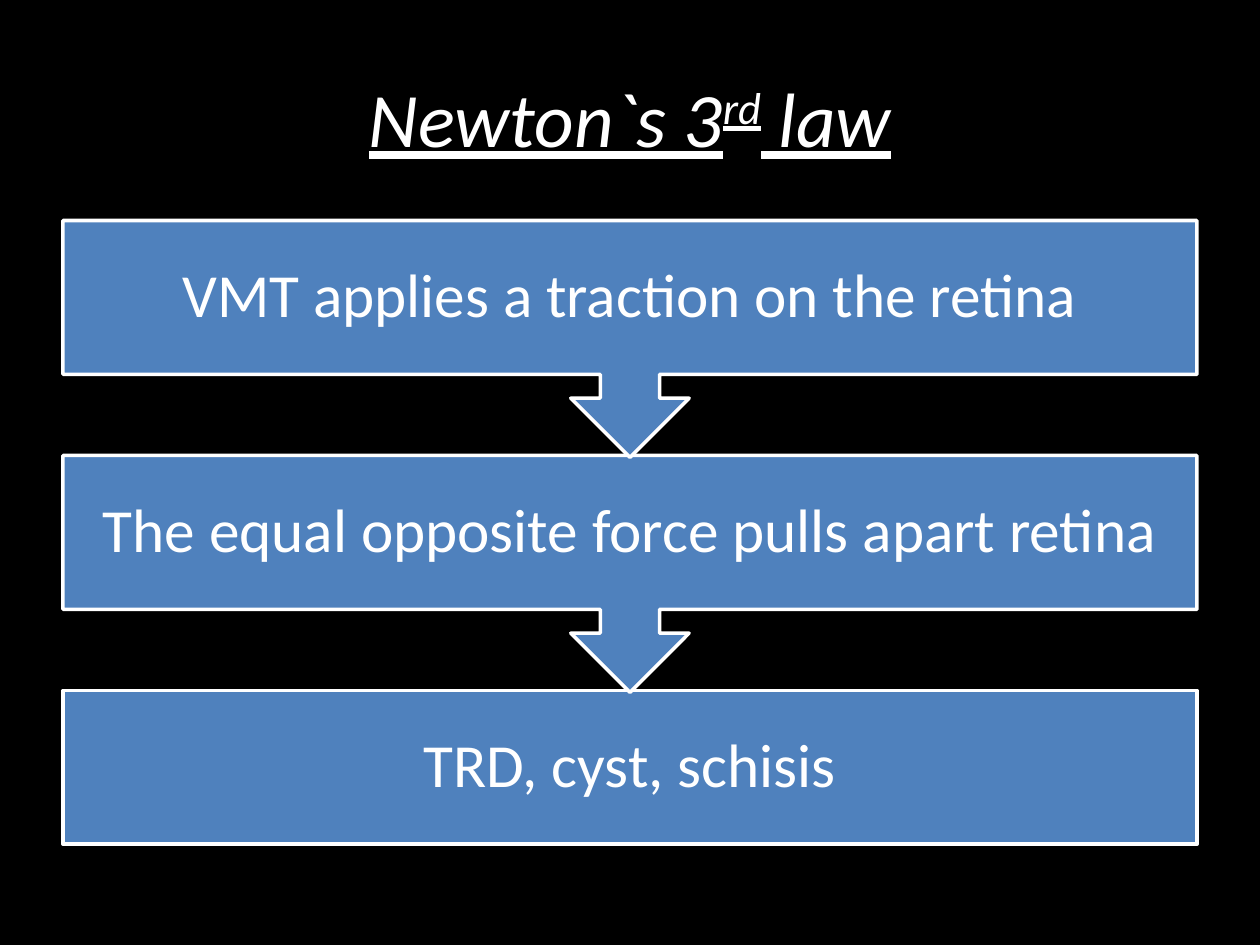
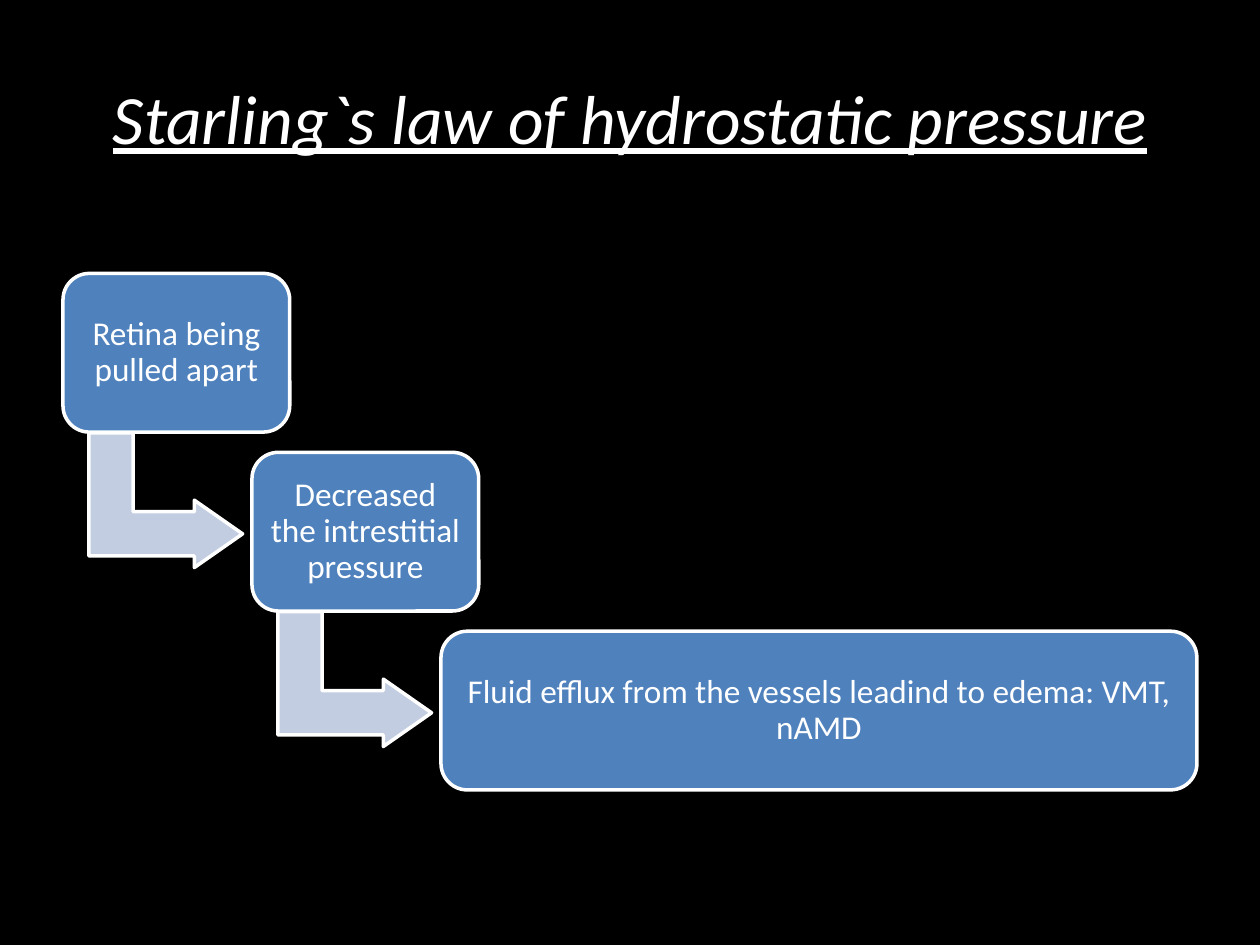
from pptx import Presentation
from pptx.dml.color import RGBColor
from pptx.enum.shapes import MSO_SHAPE
from pptx.enum.text import MSO_ANCHOR, PP_ALIGN
from pptx.util import Inches, Pt

RECTANGLE = MSO_SHAPE.RECTANGLE
CALLOUT = MSO_SHAPE.DOWN_ARROW_CALLOUT
ROUNDED = MSO_SHAPE.ROUNDED_RECTANGLE
BENT_ARROW = MSO_SHAPE.BENT_UP_ARROW
CENTER = PP_ALIGN.CENTER
MIDDLE = MSO_ANCHOR.MIDDLE

COLORS = {"background": "000000", "text": "FFFFFF", "outline": "FFFFFF",
          "step": "4F81BD", "link": "C2CDE1"}
TITLE_FONT = {"name": "Calibri", "italic": True, "underline": True}
STEP_FONT = {"name": "Calibri"}
TITLE_ONLY = 5
MARGIN, CONTENT_WIDTH = 0.5, 9


def write(paragraph, text, size, font_format):
    """Add a run in the shared text colour and return it."""
    paragraph.alignment = CENTER
    run = paragraph.add_run()
    run.text = text
    for attribute, value in {**font_format, "size": Pt(size)}.items():
        setattr(run.font, attribute, value)
    run.font.color.rgb = RGBColor.from_string(COLORS["text"])
    return run


def add_part(slide, kind, box, color, text="", size=0, inset=0):
    """Add an outlined diagram part, with its text if it has one."""
    part = slide.shapes.add_shape(kind, *(Inches(length) for length in box))
    part.shadow.inherit = False
    part.fill.solid()
    part.fill.fore_color.rgb = RGBColor.from_string(COLORS[color])
    part.line.color.rgb = RGBColor.from_string(COLORS["outline"])
    part.line.width = Pt(2)
    if text:
        frame = part.text_frame
        frame_format = {"word_wrap": True, "vertical_anchor": MIDDLE}
        for side in ("left", "top", "right", "bottom"):
            frame_format["margin_" + side] = Inches(inset)
        for attribute, value in frame_format.items():
            setattr(frame, attribute, value)
        frame.paragraphs[0].line_spacing = 0.9
        write(frame.paragraphs[0], text, size, STEP_FONT)
    return part


deck = Presentation()
deck.slide_width, deck.slide_height = Inches(10), Inches(7.5)

# Shared black background
background = deck.slide_master.background.fill
background.solid()
background.fore_color.rgb = RGBColor.from_string(COLORS["background"])

# Titles: each piece is text with its baseline shift
titles = [
    (44, [("Newton`s 3", 0), ("rd", 30000), (" law", 0)]),
    (39.6, [("Starling`s law of hydrostatic pressure", 0)]),
]
for size, pieces in titles:
    slide = deck.slides.add_slide(deck.slide_layouts[TITLE_ONLY])
    title = slide.shapes.title
    title.left, title.top = Inches(MARGIN), Inches(0.3)
    title.width, title.height = Inches(CONTENT_WIDTH), Inches(1.25)
    title.text_frame.vertical_anchor = MIDDLE
    for text, shift in pieces:
        run = write(title.text_frame.paragraphs[0], text, size, TITLE_FONT)
        if shift:
            run.font._element.set("baseline", str(shift))
newton, starling = deck.slides

# Newton: stacked rows, drawn bottom up so each arrow tip overlaps the next row
forces = ["VMT applies a traction on the retina",
          "The equal opposite force pulls apart retina",
          "TRD, cyst, schisis"]
FORCE_TOP, FORCE_PITCH = 1.75, 1.865
for row, text in reversed(list(enumerate(forces))):
    is_last = row == len(forces) - 1
    kind, height = (RECTANGLE, 1.22) if is_last else (CALLOUT, 1.88)
    box = (MARGIN, FORCE_TOP + row * FORCE_PITCH, CONTENT_WIDTH, height)
    add_part(newton, kind, box, "step", text, 35, 0.27)

# Starling: staircase of steps joined by bent arrows
pressures = [("Retina being pulled apart", 1.8),
             ("Decreased the intrestitial pressure", 1.8),
             ("Fluid efflux from the vessels leadind to edema: VMT, nAMD", 6)]
STAIR_TOP, STAIR_RUN, STAIR_RISE = 2.17, 1.5, 1.42
for step, (text, width) in enumerate(pressures):
    left = MARGIN + step * STAIR_RUN
    top = STAIR_TOP + step * STAIR_RISE
    if step < len(pressures) - 1:
        link = add_part(starling, BENT_ARROW,
                        (left + 0.28, top + 1.19, 1.07, 1.22), "link")
        link.rotation = 90
        for index, share in enumerate((0.328, 0.25, 0.358)):
            link.adjustments[index] = share
    add_part(starling, ROUNDED, (left, top, width, 1.26), "step", text, 19, 0.08)

deck.save("out.pptx")
